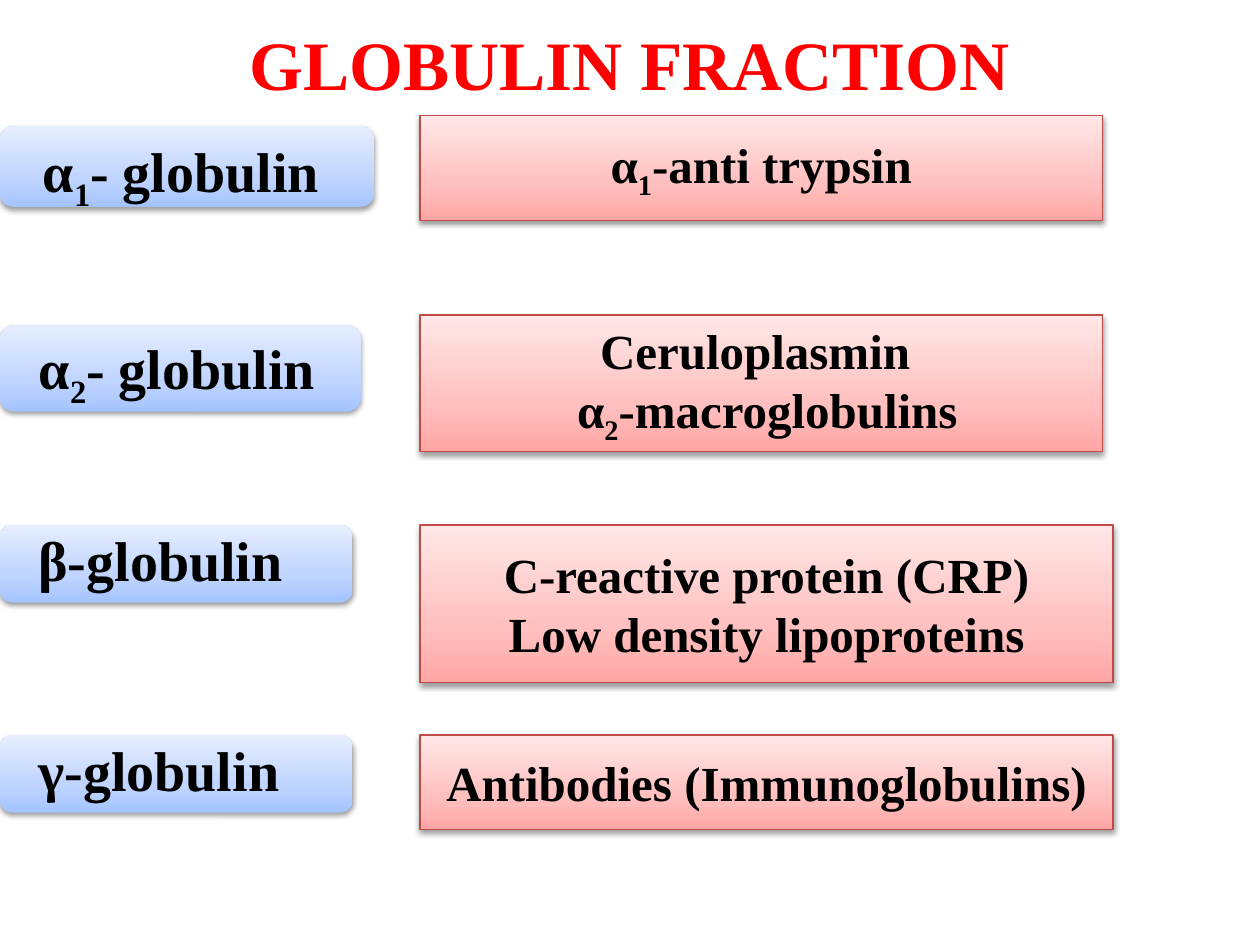
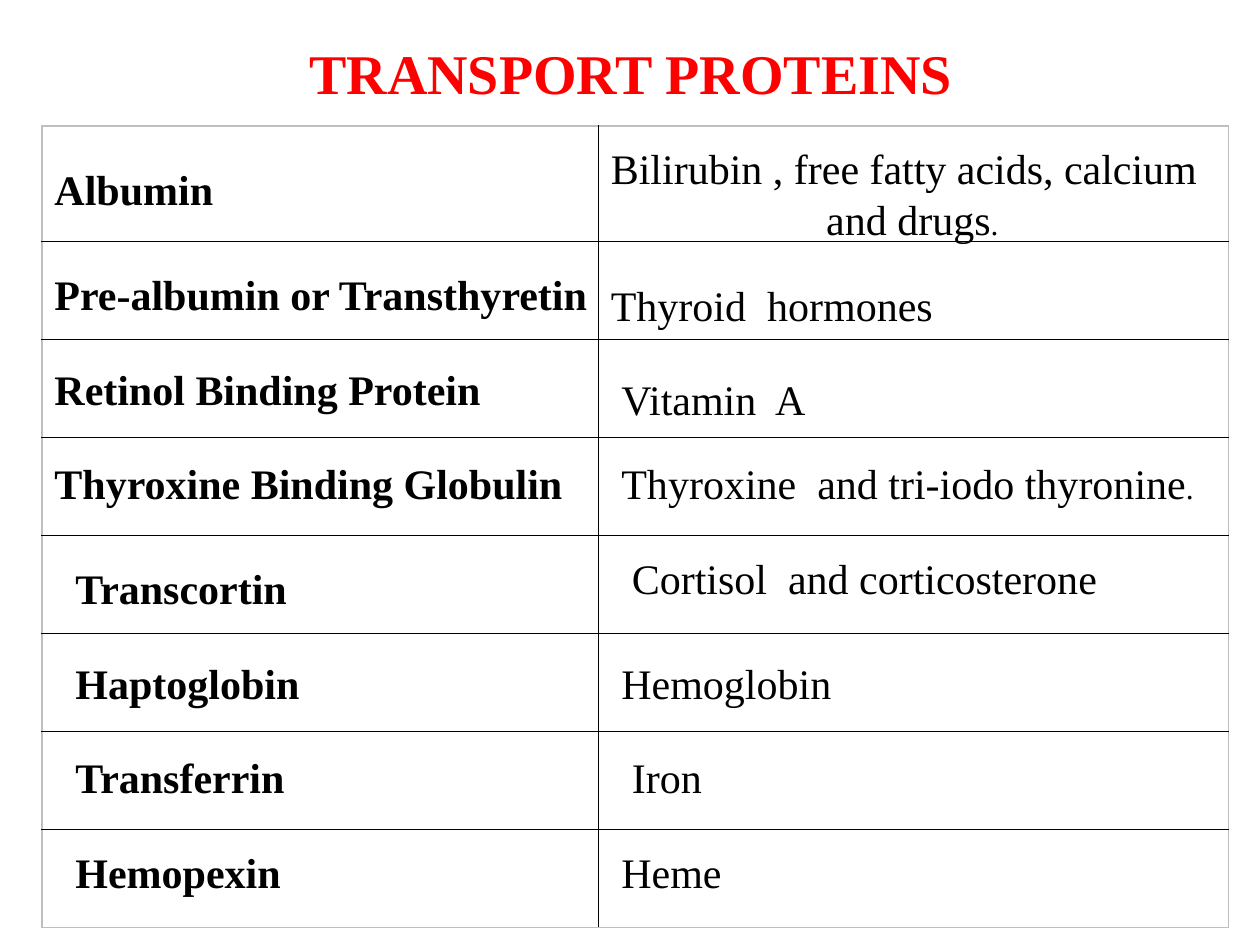
from copy import deepcopy
from pptx import Presentation
from pptx.dml.color import RGBColor as RGB
from pptx.enum.shapes import MSO_SHAPE as SHAPE
from pptx.enum.text import MSO_ANCHOR as ANCHOR, PP_ALIGN as ALIGN
from pptx.oxml import parse_xml
from pptx.oxml.ns import nsdecls, qn
from pptx.util import Inches, Pt

# The slide is a grid of 120 columns and 90 rows.
deck = Presentation()
deck.slide_width, deck.slide_height = Inches(10), Inches(7.5)
UNIT = deck.slide_width / 120
FONT, RED, BLACK, GREY = "Times New Roman", "FF0000", "000000", "BFBFBF"
BLUES = ["A4C4FF", "BFD4FF", "E6EEFF"]
PINKS = ["FFA6A5", "FFC0BF", "FFE7E7"]
EDGE = "BF4C48"
SHADE = f"""<a:effectLst {nsdecls('a')}><a:outerShdw blurRad="40000" dist="20000"
 dir="5400000" rotWithShape="0"><a:srgbClr val="000000"><a:alpha val="38000"/>
</a:srgbClr></a:outerShdw></a:effectLst>"""


def grid(*cells):
    """Turn grid counts into slide lengths."""
    return [round(n * UNIT) for n in cells]


def write(frame, lines, size, tint=BLACK, bold=True, align=ALIGN.LEFT):
    """Fill a frame; each second part between bars is a subscript or small dot."""
    frame.word_wrap = True
    for i, line in enumerate(lines):
        para = frame.paragraphs[0] if i == 0 else frame.add_paragraph()
        para.alignment = align if i == len(lines) - 1 or bold else ALIGN.LEFT
        for j, part in enumerate(line.split("|")):
            run = para.add_run()
            run.text = part
            look = {"name": FONT, "size": Pt(size), "bold": bold}
            if part == ".":
                look["size"] = Pt(18)
            for key, val in look.items():
                setattr(run.font, key, val)
            run.font.color.rgb = RGB.from_string(tint)
            if j % 2 and part.isdigit():
                run.font._element.set("baseline", "-25000")


# Both slides: a red centred title
heads = [("GLOBULIN FRACTION", 39.6, (6, 2, 108, 8)),
         ("TRANSPORT PROTEINS", 32, (19, 3, 82.2, 7.7))]
slides = []
for text, size, place in heads:
    slide = deck.slides.add_slide(deck.slide_layouts[5])
    title = slide.shapes.title
    title.left, title.top, title.width, title.height = grid(*place)
    title.text_frame.vertical_anchor = ANCHOR.MIDDLE
    write(title.text_frame, [text], size, RED, align=ALIGN.CENTER)
    slides.append(slide)
first, second = slides

# Slide 1: each fraction beside its proteins
tags = [("α|1|- globulin", (0, 12, 35.6, 7.7), 3.7, 1),
        ("α|2|- globulin", (0, 31, 34.4, 8.2), 3.3, 0),
        ("β-globulin", (0, 50, 33.6, 7.4), 3.3, 0),
        ("γ-globulin", (0, 70, 33.6, 7.4), 3.3, 0)]
facts = [(["α|1|-anti trypsin"], (40, 11, 65, 10)),
         (["Ceruloplasmin ", " α|2|-macroglobulins"], (40, 30, 65, 13)),
         (["C-reactive protein (CRP)", "Low density lipoproteins"],
          (40, 50, 66, 15)),
         (["Antibodies (Immunoglobulins)"], (40, 70, 66, 9))]
boxes = [(SHAPE.ROUNDED_RECTANGLE, place, BLUES, [text], 32, pad, drop)
         for text, place, pad, drop in tags]
boxes += [(SHAPE.RECTANGLE, place, PINKS, lines, 28, 0, 0)
          for lines, place in facts]
for kind, place, tints, lines, size, pad, drop in boxes:
    box = first.shapes.add_shape(kind, *grid(*place))
    box.fill.gradient()
    box.fill.gradient_angle = 90
    stops = box._element.spPr.find(qn("a:gradFill")).find(qn("a:gsLst"))
    stops.insert(1, deepcopy(stops[0]))
    for stop, spot, tint in zip(box.fill.gradient_stops, (0, 0.35, 1), tints):
        stop.position = spot
        stop.color.rgb = RGB.from_string(tint)
    if tints is PINKS:
        box.line.color.rgb = RGB.from_string(EDGE)
        box.line.width = Pt(0.75)
    else:
        box.line.fill.background()
    box._element.spPr.append(parse_xml(SHADE))
    frame = box.text_frame
    frame.vertical_anchor = ANCHOR.MIDDLE
    if pad:
        left, top = grid(pad, drop)
        edges = {"margin_left": left, "margin_top": top,
                 "margin_right": 0, "margin_bottom": 0}
        for key, val in edges.items():
            setattr(frame, key, val)
    write(frame, lines, size,
          align=ALIGN.LEFT if pad else ALIGN.CENTER)
    if pad:
        frame.paragraphs[0].line_spacing = 0.9

# Slide 2: a ruled table with labels set over its cells
rows, cols = 8, 2
table = second.shapes.add_table(rows, cols, *grid(4, 12, 113, 76.4)).table
table.first_row = table.horz_banding = False
for col, wide in zip(table.columns, grid(53, 60)):
    col.width = wide
for row, high in zip(table.rows, grid(11, *[9.34] * (rows - 1))):
    row.height = high
for r in range(rows):
    for c in range(cols):
        cell = table.cell(r, c)
        outer = {"L": c == 0, "R": c == cols - 1,
                 "T": r == 0, "B": r == rows - 1}
        for side, rim in outer.items():
            cell._tc.get_or_add_tcPr().append(parse_xml(
                f'<a:ln{side} {nsdecls("a")} w="12700"><a:solidFill><a:srgbClr '
                f'val="{GREY if rim else BLACK}"/></a:solidFill></a:ln{side}>'))
        cell.fill.background()

names = [("Albumin", 4, 15), ("Pre-albumin or Transthyretin ", 4, 25),
         ("Retinol Binding Protein", 4, 34),
         ("Thyroxine Binding Globulin", 4, 43), ("Transcortin", 6, 53),
         ("Haptoglobin", 6, 62), ("Transferrin", 6, 71), ("Hemopexin ", 6, 80)]
loads = [("Bilirubin , free fatty acids, calcium \nand drugs|.", 57, 13),
         ("Thyroid  hormones", 57, 26), ("Vitamin  A", 58, 35),
         ("Thyroxine  and tri-iodo thyronine|.", 58, 43),
         ("Cortisol  and corticosterone", 59, 52), ("Hemoglobin ", 58, 62),
         ("Iron", 59, 71), ("Heme ", 58, 80)]
for group, wide, bold in [(names, 54.6, True), (loads, 59.8, False)]:
    for text, x, y in group:
        lines = text.split("\n")
        label = second.shapes.add_textbox(*grid(x, y, wide, 6 * len(lines)))
        write(label.text_frame, lines, 24, bold=bold,
              align=ALIGN.CENTER if len(lines) > 1 else ALIGN.LEFT)

deck.save("out.pptx")
